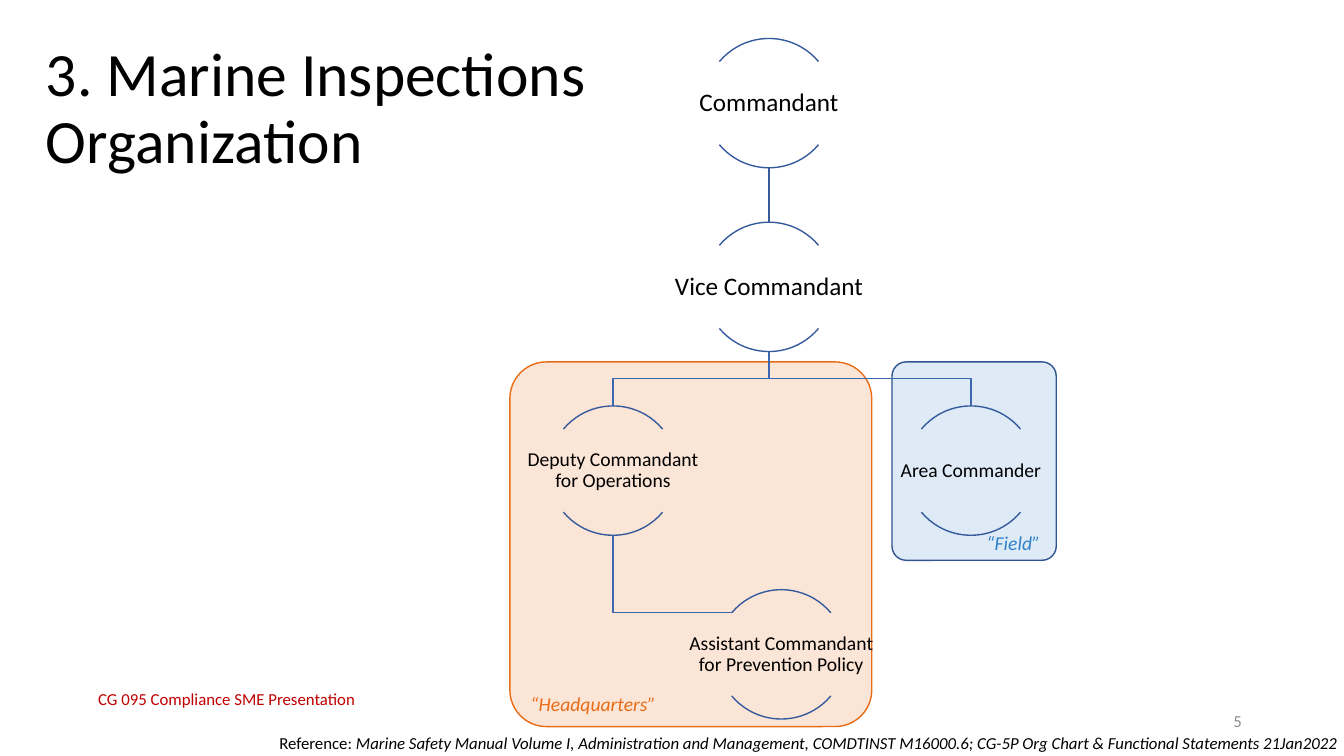
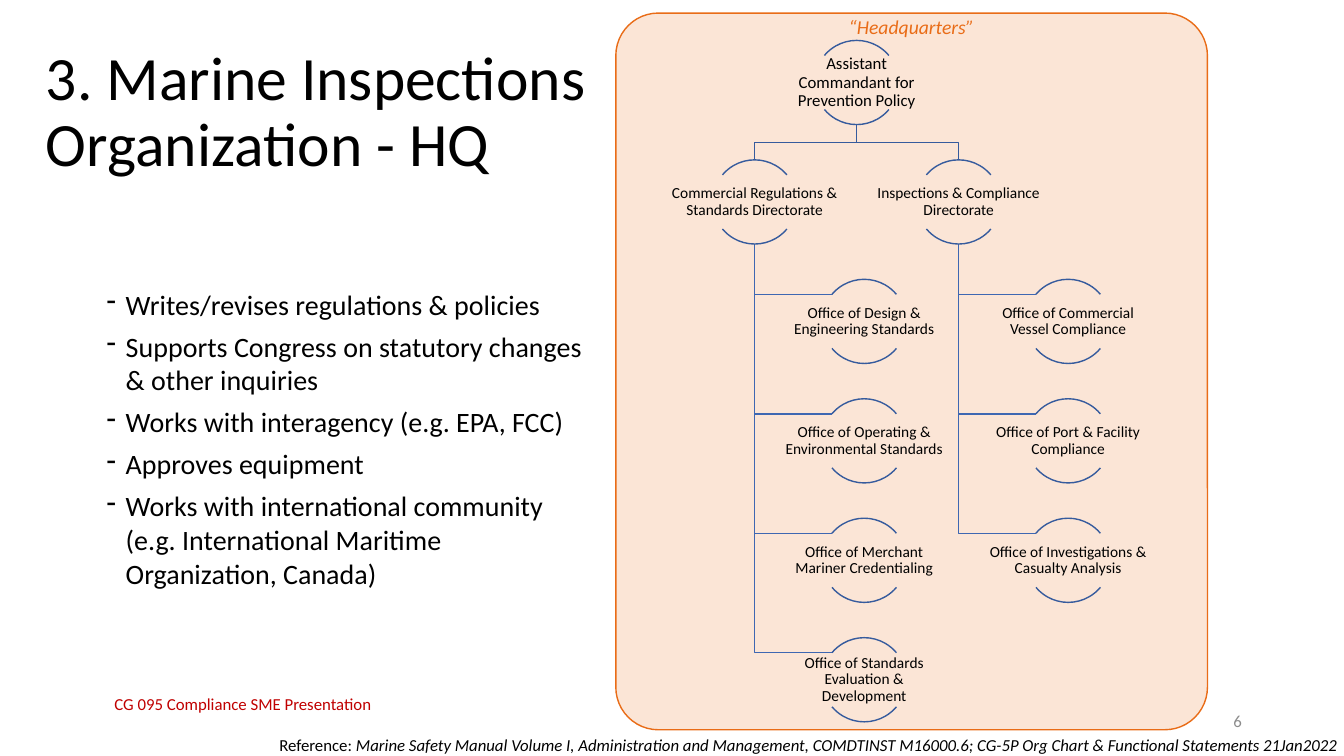
from dataclasses import dataclass
from math import cos, radians, sin

from lxml import etree
from pptx import Presentation
from pptx.dml.color import RGBColor
from pptx.enum.shapes import MSO_CONNECTOR, MSO_SHAPE
from pptx.enum.text import MSO_ANCHOR, PP_ALIGN
from pptx.oxml.ns import qn
from pptx.util import Cm, Pt

FONT = "Calibri"
COLORS = {
    "text": "000000",
    "peach": "FBE5D6",
    "orange": "E96C17",
    "pale": "DEEBF7",
    "navy": "325491",
    "sky": "3181C9",
    "arc": "365B9D",
    "link": "3E67B2",
    "red": "C00000",
    "gray": "8C8C8C",
}
TILT = radians(40)  # where the arcs of a node end
MANUAL = (
    "Marine Safety Manual Volume I, Administration and Management, "
    "COMDTINST M16000.6; CG-5P Org Chart & Functional Statements 21Jan2022"
)
DUTIES = [
    "Writes/revises regulations & policies",
    "Supports Congress on statutory changes & other inquiries",
    "Works with interagency (e.g. EPA, FCC)",
    "Approves equipment",
    "Works with international community (e.g. International Maritime "
    "Organization, Canada)",
]


@dataclass
class Node:
    text: str
    x: float
    row: int
    size: int
    boss: int = -1  # index of the parent node
    hang: bool = False  # joined from the side, not from above
    pad: float = 0.03


@dataclass
class Grid:
    top: float  # centre of the first row
    step: float
    dia: float

    def mid(self, node):
        return self.top + node.row * self.step


def paint(run, size, color, italic=False):
    font = run.font
    font.name, font.size, font.italic = FONT, Pt(size), italic
    font.color.rgb = RGBColor.from_string(COLORS[color])


def stroke(shape, color):
    shape.line.color.rgb = RGBColor.from_string(COLORS[color])
    shape.line.width = Pt(1)


def add_text(slide, at, lines, size, color="text", align=PP_ALIGN.LEFT,
             anchor=MSO_ANCHOR.TOP, italic=False, space=1.0):
    """Add a text box with one paragraph for each line; return its frame."""
    frame = slide.shapes.add_textbox(*map(Cm, at)).text_frame
    frame.word_wrap = True
    frame.vertical_anchor = anchor
    for i, line in enumerate(lines):
        para = frame.add_paragraph() if i else frame.paragraphs[0]
        para.text = line
        para.alignment, para.line_spacing = align, space
        for run in para.runs:
            paint(run, size, color, italic)
    return frame


def add_panel(slide, at, round_by, fill, line):
    panel = slide.shapes.add_shape(MSO_SHAPE.ROUNDED_RECTANGLE, *map(Cm, at))
    panel.adjustments[0] = round_by
    panel.shadow.inherit = False
    panel.fill.solid()
    panel.fill.fore_color.rgb = RGBColor.from_string(COLORS[fill])
    stroke(panel, line)


def add_label(slide, x, y, wide, text, color):
    add_text(slide, (x, y, wide, 0.87), [text], 14, color,
             PP_ALIGN.CENTER, italic=True)


def add_link(slide, grid, boss, node, color):
    """Join a node to its parent by a straight or a bent line."""
    half = grid.dia / 2
    start = (boss.x, grid.mid(boss) + half)
    end = (node.x, grid.mid(node) - half)
    if node.x == boss.x:
        line = slide.shapes.add_connector(
            MSO_CONNECTOR.STRAIGHT, *map(Cm, start + end))
        etree.SubElement(line.element.spPr, qn("a:effectLst"))
    else:
        if node.hang:
            y = grid.mid(node) - half * sin(TILT)
            bends = [(boss.x, y), (node.x - half * cos(TILT), y)]
        else:
            y = (start[1] + end[1]) / 2
            bends = [(boss.x, y), (node.x, y), end]
        pen = slide.shapes.build_freeform(*map(Cm, start))
        pen.add_line_segments([(Cm(a), Cm(b)) for a, b in bends], close=False)
        line = pen.convert_to_shape()
        line.fill.background()
        line.shadow.inherit = False
    stroke(line, color)


def add_node(slide, grid, node):
    """Draw a text between an upper and a lower arc."""
    dia, y = grid.dia, grid.mid(node)
    for first, last in ((220, 320), (40, 140)):
        arc = slide.shapes.add_shape(
            MSO_SHAPE.ARC, Cm(node.x - dia / 2), Cm(y - dia / 2),
            Cm(dia), Cm(dia))
        # Angles are stored in 1/60000 degree, adjustments in 1/100000
        arc.adjustments[0], arc.adjustments[1] = first * 0.6, last * 0.6
        arc.fill.background()
        arc.shadow.inherit = False
        stroke(arc, "arc")
    high = dia * sin(TILT)
    frame = add_text(slide, (node.x - dia, y - high / 2, 2 * dia, high),
                     [node.text], node.size, align=PP_ALIGN.CENTER,
                     anchor=MSO_ANCHOR.MIDDLE, space=0.9)
    frame.margin_left = frame.margin_right = Cm(node.pad)
    frame.margin_top = frame.margin_bottom = Cm(0.03)


def add_tree(slide, grid, nodes):
    for node in nodes:
        if node.boss >= 0:
            add_link(slide, grid, nodes[node.boss], node,
                     "link" if node.boss else "arc")
    for node in nodes:
        add_node(slide, grid, node)


def add_list(slide, at, lines):
    frame = add_text(slide, at, lines, 20)
    for para in frame.paragraphs:
        para.space_after = Pt(6)
        props = para._p.get_or_add_pPr()
        props.set("marL", str(Cm(0.48)))
        props.set("indent", str(-Cm(0.48)))
        etree.SubElement(props, qn("a:buChar")).set("char", "-")


def add_frame(slide, title, page, head, tag, foot):
    """Add title, tag, source and page number; head and foot are tops."""
    middle = MSO_ANCHOR.MIDDLE
    add_text(slide, (0.91, head, 30.63, 3.68), [title], 44,
             anchor=middle, space=0.9)
    add_text(slide, (*tag, 11.43, 1.02), ["CG 095 Compliance SME Presentation"],
             12, "red", PP_ALIGN.CENTER, middle)
    source = add_text(slide, (6.79, foot, 28, 0.76), ["Reference: "], 12)
    run = source.paragraphs[0].add_run()
    run.text = MANUAL
    paint(run, 12, "text", True)
    add_text(slide, (23.93, 17.65, 7.62, 1.02), [page], 12, "gray",
             PP_ALIGN.RIGHT, middle)


def add_chain(slide):
    add_panel(slide, (12.85, 9.12, 9.12, 9.19), 0.101, "peach", "orange")
    add_panel(slide, (22.48, 9.12, 4.14, 5), 0.086, "pale", "navy")
    add_label(slide, 13.11, 17.3, 3.68, "“Headquarters”", "orange")
    add_label(slide, 23.85, 13.26, 3.38, "“Field”", "sky")
    add_tree(slide, Grid(2.6, 4.63, 3.26), [
        Node("Commandant", 19.38, 0, 18),
        Node("Vice Commandant", 19.38, 1, 18, 0),
        Node("Deputy Commandant for Operations", 15.45, 2, 14, 1, pad=1.02),
        Node("Assistant Commandant for Prevention Policy", 19.69, 3, 14, 2,
             True, 0.76),
        Node("Area Commander", 24.47, 2, 14, 1),
    ])
    add_frame(slide, "3. Marine Inspections\nOrganization", "5",
              0.94, (0, 17.09), 18.34)


def add_staff(slide):
    units = [
        ("Commercial Regulations & Standards Directorate", [
            "Office of Design & Engineering Standards",
            "Office of Operating & Environmental Standards",
            "Office of Merchant Mariner Credentialing",
            "Office of Standards Evaluation & Development",
        ]),
        ("Inspections & Compliance Directorate", [
            "Office of Commercial Vessel Compliance",
            "Office of Port & Facility Compliance",
            "Office of Investigations & Casualty Analysis",
        ]),
    ]
    left, gap = 19.02, 5.14
    nodes = [Node("Assistant Commandant for Prevention Policy",
                  left + gap / 2, 0, 12, pad=0.51)]
    for col, (unit, teams) in enumerate(units):
        x, boss = left + col * gap, len(nodes)
        nodes.append(Node(unit, x, 1, 11, 0))
        nodes += [Node(team, x + 2.76, row, 11, boss, True)
                  for row, team in enumerate(teams, 2)]

    add_panel(slide, (15.52, 0.33, 14.91, 18.06), 0.072, "peach", "orange")
    add_tree(slide, Grid(2.08, 3.01, 2.12), nodes)
    add_label(slide, 21.13, 0.25, 3.68, "“Headquarters”", "orange")
    add_list(slide, (2.44, 7.11, 12.88, 9.02), DUTIES)
    add_frame(slide, "3. Marine Inspections\nOrganization - HQ", "6",
              1.02, (0.41, 17.22), 18.39)


def main():
    deck = Presentation()
    deck.slide_width, deck.slide_height = Cm(33.87), Cm(19.05)
    for fill in (add_chain, add_staff):
        fill(deck.slides.add_slide(deck.slide_layouts[6]))
    deck.save("out.pptx")


if __name__ == "__main__":
    main()
